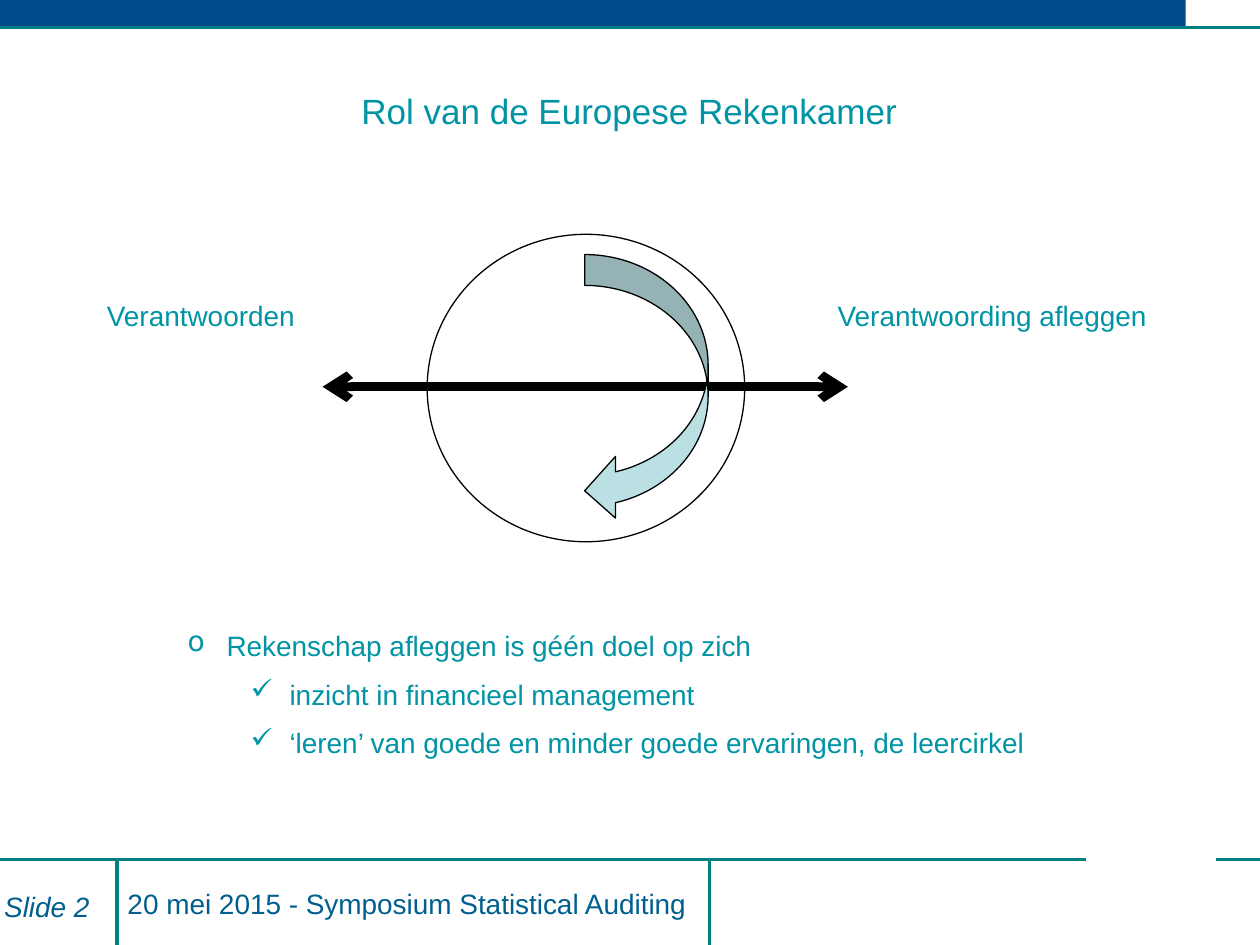
from dataclasses import dataclass

from lxml import etree
from pptx import Presentation
from pptx.dml.color import RGBColor
from pptx.enum.shapes import MSO_CONNECTOR, MSO_SHAPE
from pptx.enum.text import MSO_ANCHOR as Anchor, PP_ALIGN as Align
from pptx.oxml.ns import qn
from pptx.util import Inches, Pt

TEAL_LINE = RGBColor(0x00, 0x80, 0x80)
TEAL_TEXT = RGBColor(0x00, 0x94, 0xA4)
BAR_BLUE = RGBColor(0x00, 0x4A, 0x8A)
FOOTER_BLUE = RGBColor(0x00, 0x5F, 0x8E)
PALE_BLUE = RGBColor(0xBB, 0xE0, 0xE3)
BLACK = RGBColor(0x00, 0x00, 0x00)
FONT = "Arial"
LINE_SPACING = 1.45
FOOTER_TOP = 6.82
HANGING = 0.31


@dataclass
class Box:
    left: float
    top: float
    width: float
    height: float

    def lengths(self) -> tuple:
        return tuple(Inches(v) for v in (self.left, self.top, self.width, self.height))


@dataclass
class Rule:
    x1: float
    y1: float
    x2: float
    y2: float


@dataclass
class Label:
    text: str
    box: Box
    size: int = 16
    color: RGBColor = TEAL_TEXT
    align: Align = Align.LEFT
    anchor: Anchor = Anchor.TOP
    italic: bool = False
    spacing: float = 1.0
    margin_top: float = 0.05


@dataclass
class Bullet:
    text: str
    mark: str
    level: int


def add_rule(slide, rule: Rule, color: RGBColor, width: float, arrows: bool = False) -> None:
    connector = slide.shapes.add_connector(
        MSO_CONNECTOR.STRAIGHT,
        Inches(rule.x1), Inches(rule.y1), Inches(rule.x2), Inches(rule.y2))
    connector.line.color.rgb = color
    connector.line.width = Pt(width)
    if arrows:
        line = connector.line._get_or_add_ln()
        for end in ("a:headEnd", "a:tailEnd"):
            etree.SubElement(line, qn(end), type="arrow")
    etree.SubElement(connector._element.spPr, qn("a:effectLst"))


def add_figure(slide, kind: MSO_SHAPE, box: Box, fill=None, outline=None):
    shape = slide.shapes.add_shape(kind, *box.lengths())
    shape.shadow.inherit = False
    if fill is None:
        shape.fill.background()
    else:
        shape.fill.solid()
        shape.fill.fore_color.rgb = fill
    if outline is None:
        shape.line.fill.background()
    else:
        shape.line.color.rgb = outline
        shape.line.width = Pt(0.75)
    return shape


def add_run(paragraph, text: str, size: int, color: RGBColor, italic: bool = False) -> None:
    run = paragraph.add_run()
    run.text = text
    run.font.name = FONT
    run.font.size = Pt(size)
    run.font.italic = italic
    run.font.color.rgb = color


def add_label(slide, label: Label) -> None:
    frame = slide.shapes.add_textbox(*label.box.lengths()).text_frame
    frame.word_wrap = True
    frame.vertical_anchor = label.anchor
    frame.margin_top = Inches(label.margin_top)
    paragraph = frame.paragraphs[0]
    paragraph.alignment = label.align
    paragraph.line_spacing = label.spacing
    add_run(paragraph, label.text, label.size, label.color, label.italic)


def add_bullets(slide, box: Box, bullets: list[Bullet]) -> None:
    frame = slide.shapes.add_textbox(*box.lengths()).text_frame
    frame.word_wrap = True
    for index, bullet in enumerate(bullets):
        paragraph = frame.add_paragraph() if index else frame.paragraphs[0]
        paragraph.level = bullet.level
        paragraph.line_spacing = LINE_SPACING
        properties = paragraph._p.get_or_add_pPr()
        properties.set("marL", str(Inches(HANGING + 0.5 * bullet.level)))
        properties.set("indent", str(-Inches(HANGING)))
        etree.SubElement(properties, qn("a:buChar"), char=bullet.mark)
        add_run(paragraph, bullet.text, 16, TEAL_TEXT)


def main() -> None:
    presentation = Presentation()
    presentation.slide_width = Inches(10)
    presentation.slide_height = Inches(7.5)
    slide = presentation.slides.add_slide(presentation.slide_layouts[6])

    # Header bar and frame lines
    add_figure(slide, MSO_SHAPE.RECTANGLE, Box(0, 0, 9.41, 0.23), fill=BAR_BLUE)
    frame_rules = [
        Rule(0, 0.22, 10, 0.22),
        Rule(0, FOOTER_TOP, 8.62, FOOTER_TOP),
        Rule(9.65, FOOTER_TOP, 10, FOOTER_TOP),
        *(Rule(x, FOOTER_TOP, x, 7.5) for x in (0.93, 5.63)),
    ]
    for rule in frame_rules:
        add_rule(slide, rule, TEAL_LINE, 2)

    # Learning circle with its axis
    add_rule(slide, Rule(2.56, 3.07, 6.73, 3.07), BLACK, 5, arrows=True)
    add_figure(slide, MSO_SHAPE.OVAL, Box(3.39, 1.86, 2.52, 2.44), outline=BLACK)
    arrow = add_figure(slide, MSO_SHAPE.CURVED_LEFT_ARROW, Box(4.64, 2.02, 0.98, 2.12),
                       fill=PALE_BLUE, outline=BLACK)
    for index, value in enumerate((0.25, 0.5, 0.25)):
        arrow.adjustments[index] = value

    # Title, axis labels and footer
    side = dict(anchor=Anchor.MIDDLE, spacing=LINE_SPACING, margin_top=0.17)
    labels = [
        Label("Rol van de Europese Rekenkamer", Box(0.27, 0.37, 9.45, 1.01),
              size=20, align=Align.CENTER, anchor=Anchor.MIDDLE),
        Label("Verantwoorden", Box(0.75, 1.58, 2.12, 1.6), **side),
        Label("Verantwoording afleggen", Box(6.55, 1.58, 3.43, 1.6), **side),
        Label("20 mei 2015 - Symposium Statistical Auditing", Box(0.8, 6.99, 4.86, 0.36),
              color=FOOTER_BLUE, align=Align.CENTER),
        Label("Slide 2", Box(-0.25, 7.01, 1.06, 0.34),
              color=FOOTER_BLUE, align=Align.RIGHT, italic=True),
    ]
    for label in labels:
        add_label(slide, label)

    # Conclusions
    add_bullets(slide, Box(1.39, 4.82, 7.47, 1.78), [
        Bullet("Rekenschap afleggen is géén doel op zich", "o", 0),
        Bullet("inzicht in financieel management", "✓", 1),
        Bullet("‘leren’ van goede en minder goede ervaringen, de leercirkel", "✓", 1),
    ])

    presentation.save("out.pptx")


if __name__ == "__main__":
    main()
